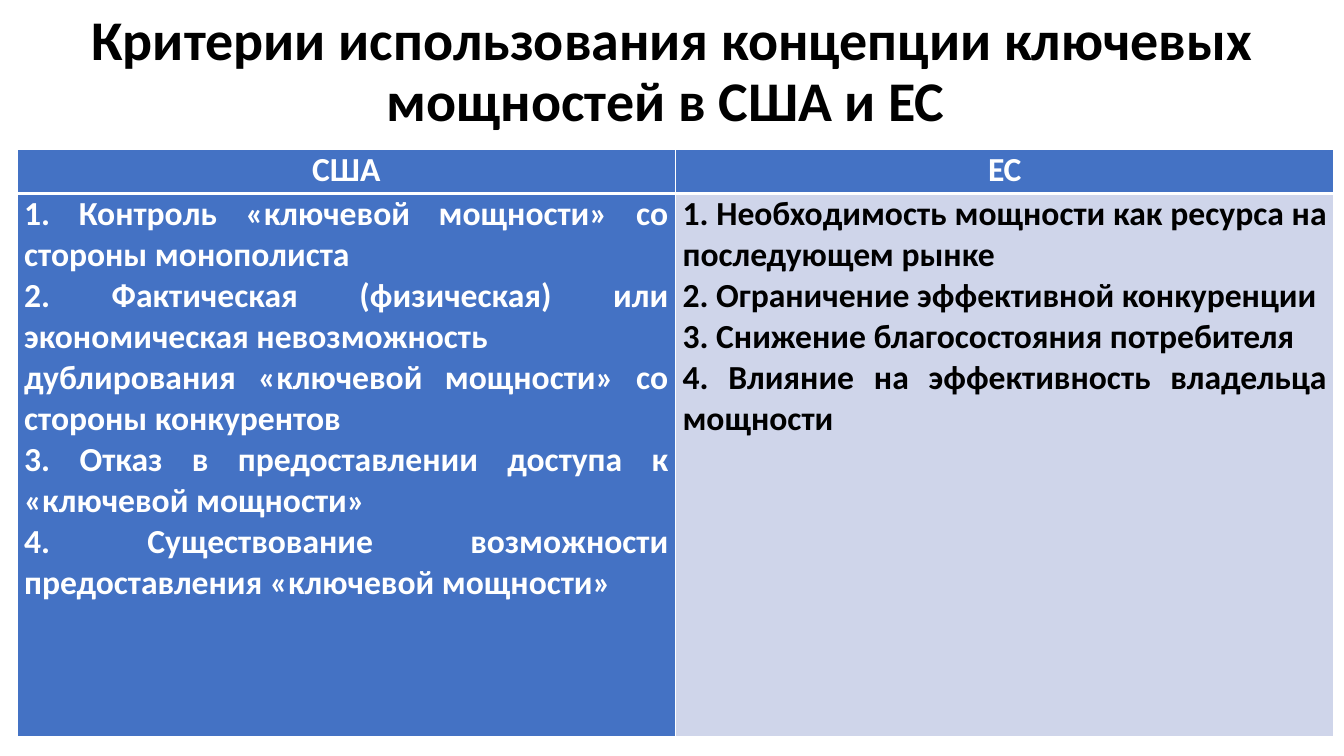
from lxml.etree import SubElement
from pptx import Presentation
from pptx.dml.color import RGBColor
from pptx.enum.text import MSO_ANCHOR, MSO_AUTO_SIZE, PP_ALIGN
from pptx.oxml.ns import qn
from pptx.util import Inches, Pt

COLORS = {"black": "000000", "white": "FFFFFF", "blue": "4472C4", "pale": "CFD5EA"}
TITLE = "Критерии использования концепции ключевых мощностей в США и ЕС "
USA_CRITERIA = [
    "1. Контроль «ключевой мощности» со стороны монополиста",
    "2. Фактическая (физическая) или экономическая невозможность",
    "дублирования «ключевой мощности» со стороны конкурентов",
    "3. Отказ в предоставлении доступа к «ключевой мощности»",
    "4. Существование возможности предоставления «ключевой мощности»",
]
EU_CRITERIA = [
    "1. Необходимость мощности как ресурса на последующем рынке",
    "2. Ограничение эффективной конкуренции",
    "3. Снижение благосостояния потребителя",
    "4. Влияние на эффективность владельца мощности",
]
ROWS = [
    {"height": 0.44, "align": PP_ALIGN.CENTER, "borders": {"L": 1, "R": 1, "T": 1, "B": 3},
     "cells": [(["США"], "blue", "white"), (["ЕС"], "blue", "white")]},
    {"height": 5.39, "align": PP_ALIGN.JUSTIFY, "borders": {"L": 1, "R": 1, "T": 3, "B": 1},
     "cells": [(USA_CRITERIA, "blue", "white"), (EU_CRITERIA, "pale", "black")]},
]


def set_attributes(target, values):
    for name, value in values.items():
        setattr(target, name, value)


def write_paragraphs(frame, lines, size, color, paragraph_format):
    for index, line in enumerate(lines):
        paragraph = frame.add_paragraph() if index else frame.paragraphs[0]
        set_attributes(paragraph, paragraph_format)
        run = paragraph.add_run()
        run.text = line
        set_attributes(run.font, {"name": "Calibri", "size": Pt(size), "bold": True})
        run.font.color.rgb = RGBColor.from_string(COLORS[color])


def draw_borders(cell, widths):
    properties = cell._tc.get_or_add_tcPr()
    for side, width in widths.items():
        line = SubElement(properties, qn(f"a:ln{side}"), w=str(Pt(width)))
        fill = SubElement(line, qn("a:solidFill"))
        SubElement(fill, qn("a:srgbClr"), val=COLORS["white"])


def build_title(slide, left, top, width, height):
    title = slide.shapes.title
    set_attributes(title, {"left": Inches(left), "top": Inches(top),
                           "width": Inches(width), "height": Inches(height)})
    set_attributes(title.text_frame, {"word_wrap": True, "auto_size": MSO_AUTO_SIZE.NONE,
                                      "vertical_anchor": MSO_ANCHOR.MIDDLE})
    write_paragraphs(title.text_frame, [TITLE], 40, "black",
                     {"alignment": PP_ALIGN.CENTER, "line_spacing": 0.9})


def build_criteria_table(slide, left, top, width, height):
    table = slide.shapes.add_table(len(ROWS), 2, Inches(left), Inches(top),
                                   Inches(width), Inches(height)).table
    table.horz_banding = False
    for column in table.columns:
        column.width = Inches(width / 2)
    for row_index, row in enumerate(ROWS):
        table.rows[row_index].height = Inches(row["height"])
        for column_index, (lines, fill, color) in enumerate(row["cells"]):
            cell = table.cell(row_index, column_index)
            set_attributes(cell, {"margin_left": Inches(0.07), "margin_right": Inches(0.07),
                                  "margin_top": 0, "margin_bottom": 0})
            draw_borders(cell, row["borders"])
            cell.fill.solid()
            cell.fill.fore_color.rgb = RGBColor.from_string(COLORS[fill])
            write_paragraphs(cell.text_frame, lines, 24, color, {"alignment": row["align"]})


def main():
    presentation = Presentation()
    set_attributes(presentation, {"slide_width": Inches(13.33), "slide_height": Inches(7.5)})
    slide = presentation.slides.add_slide(presentation.slide_layouts[5])
    build_title(slide, 0, 0, 13.33, 1.45)
    build_criteria_table(slide, 0.17, 1.48, 13.06, 5.83)
    presentation.save("out.pptx")


if __name__ == "__main__":
    main()
